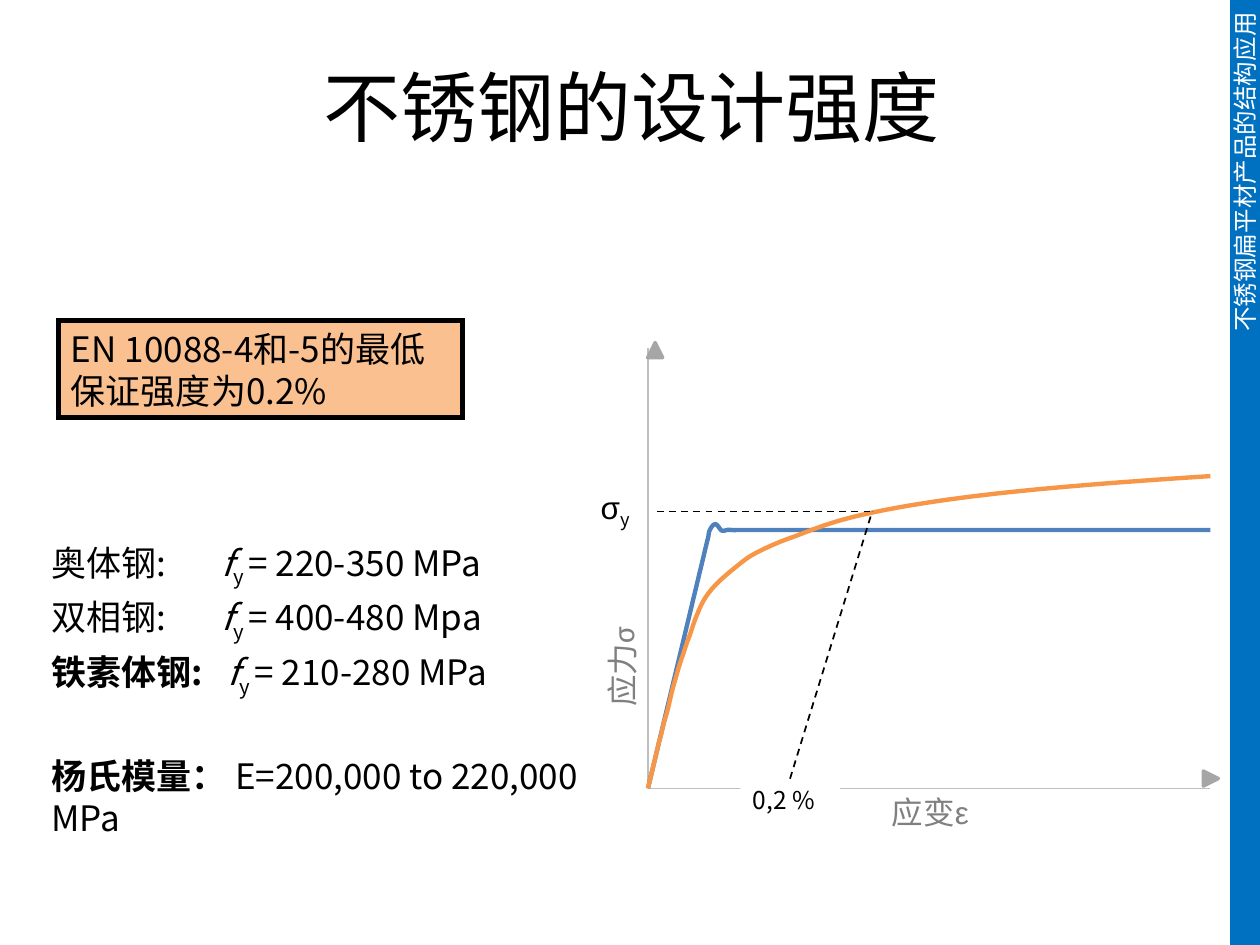
from lxml.etree import SubElement
from pptx import Presentation
from pptx.chart.data import XyChartData
from pptx.dml.color import RGBColor
from pptx.enum.chart import XL_CHART_TYPE, XL_TICK_LABEL_POSITION, XL_TICK_MARK
from pptx.enum.dml import MSO_LINE
from pptx.enum.shapes import MSO_CONNECTOR, MSO_SHAPE
from pptx.enum.text import MSO_ANCHOR, PP_ALIGN
from pptx.oxml import parse_xml
from pptx.oxml.ns import nsdecls, qn
from pptx.util import Pt

CJK = "Noto Sans CJK SC"
YIELD = [("f", {"italic": True}), ("y ", {"sub": True})]
STEEL_STRESS = [0, 2, 4, 6, 8, 9, 11, 13, 15, 17, 19, 21, 23, 25, 26, 28, 30, 32, 34, 36,
                38, 40, 42, 43]
STAINLESS_STRESS = STEEL_STRESS + [45, 47, 49, 51, 53, 55, 57, 58, 60, 62, 64, 66, 68, 70,
                                   72, 74, 75, 77, 79, 81, 83, 85, 87, 89, 91, 92, 94, 96,
                                   98, 100]
STAINLESS_STRAIN = [0, 0.00005, 0.0001, 0.00015, 0.0002, 0.00023, 0.00028, 0.00034, 0.00039,
                    0.00044, 0.0005, 0.00056, 0.00063, 0.0007, 0.00074, 0.00081, 0.00089,
                    0.00099, 0.00114, 0.00135, 0.0016, 0.0019, 0.00235, 0.00263, 0.0032,
                    0.004, 0.0052, 0.007, 0.0097, 0.013, 0.016, 0.02, 0.03, 0.04, 0.042,
                    0.05, 0.07, 0.08, 0.1, 0.11, 0.13, 0.15, 0.17, 0.2, 0.23, 0.25, 0.29,
                    0.32, 0.35, 0.39, 0.43, 0.48, 0.52, 0.57]
STEEL_PLATEAU = [(0.0011, 44), (0.0012, 45), (0.0013, 44), (0.0014, 44), (0.0015, 44),
                 (0.0016, 44), (0.0017, 44), (0.0018, 44), (0.003, 44), (0.005, 44),
                 (0.01, 44), (0.015, 44)]


def color(value):
    """Turn a hex string into a colour."""
    return RGBColor.from_string(value)


def points(box):
    """Convert a box of numbers to lengths."""
    return [Pt(value) for value in box]


def inside(box, left, top, width, height):
    """Place a part relative to the corner of its region."""
    return box[0] + left, box[1] + top, width, height


def add_span(para, text, size, ink="000000", font=CJK, bold=False, italic=False, sub=False):
    """Add one formatted run to a paragraph."""
    span = para.add_run()
    span.text = text
    span.font.size = Pt(size)
    span.font.name = font
    span.font.bold = bold
    span.font.italic = italic
    span.font.color.rgb = color(ink)
    properties = span.font._element
    SubElement(properties, qn("a:ea")).set("typeface", font)
    if sub:
        properties.set("baseline", "-25000")


def add_text(page, box, spans, size, ink="000000", align=PP_ALIGN.LEFT):
    """Add a text box with one vertically centred paragraph."""
    shape = page.shapes.add_textbox(*points(box))
    fill_text(shape, spans, size, ink, align)
    return shape


def fill_text(shape, spans, size, ink="000000", align=PP_ALIGN.LEFT):
    """Write one paragraph into a shape."""
    frame = shape.text_frame
    frame.word_wrap = True
    frame.vertical_anchor = MSO_ANCHOR.MIDDLE
    para = frame.paragraphs[0]
    para.alignment = align
    for text, style in spans:
        add_span(para, text, size, ink, **style)
    return para


def add_block(page, box, fill, kind=MSO_SHAPE.RECTANGLE, line=None, width=0):
    """Add a filled preset shape."""
    shape = page.shapes.add_shape(kind, *points(box))
    shape.shadow.inherit = False
    shape.fill.solid()
    shape.fill.fore_color.rgb = color(fill)
    if line:
        shape.line.color.rgb = color(line)
        shape.line.width = Pt(width)
    else:
        shape.line.fill.background()
    return shape


def add_dash(page, box, start, end):
    """Add a dashed guide line inside a region."""
    ends = [box[0] + start[0], box[1] + start[1], box[0] + end[0], box[1] + end[1]]
    guide = page.shapes.add_connector(MSO_CONNECTOR.STRAIGHT, *points(ends))
    guide.line.color.rgb = color("000000")
    guide.line.width = Pt(1)
    guide.line.dash_style = MSO_LINE.DASH
    SubElement(guide._element.spPr, qn("a:effectLst"))
    return guide


def add_sidebar(page, box):
    """Draw the blue strip with its vertical course title."""
    strip = add_block(page, box, "0070C0")
    fill_text(strip, [("不锈钢扁平材产品的结构应用", {})], 14, "FFFFFF", PP_ALIGN.RIGHT)
    strip.text_frame._txBody.bodyPr.set("vert", "vert270")


def add_note(page, box):
    """Draw the framed note on minimum strength."""
    note = add_block(page, box, "FAC090", line="000000", width=3)
    SubElement(note.line._get_or_add_ln(), qn("a:miter")).set("lim", "800000")
    para = fill_text(note, [("EN 10088-4和-5的最低保证强度为0.2%", {})], 20)
    note.text_frame.margin_right = Pt(3)
    para.line_spacing = Pt(24)


def add_strengths(page, box):
    """List the design strength of each steel family."""
    rows = [("奥体钢:", False, YIELD, "= 220-350 MPa", 97.3, 0),
            ("双相钢:", False, YIELD, "= 400-480 Mpa", 97.3, 7),
            ("铁素体钢:", True, YIELD, "= 210-280 MPa", 100.8, 7),
            ("杨氏模量：", True, [], "E=200,000 to 220,000 MPa", 105, 31.6)]
    frame = page.shapes.add_textbox(*points(box)).text_frame
    frame.word_wrap = True
    frame.margin_top = Pt(44.4)
    for index, (name, bold, symbol, value, stop, gap) in enumerate(rows):
        para = frame.add_paragraph() if index else frame.paragraphs[0]
        para.space_before = Pt(gap)
        para.line_spacing = Pt(24.3)
        tabs = SubElement(para._p.get_or_add_pPr(), qn("a:tabLst"))
        SubElement(tabs, qn("a:tab"), pos=str(Pt(stop)), algn="l")
        add_span(para, name + "\t", 20, bold=bold)
        for text, style in symbol + [(value, {})]:
            add_span(para, text, 20, **style)


def add_curves(page, box):
    """Chart the stress-strain curves of stainless and carbon steel."""
    data = XyChartData()
    steel = [(stress / 40000, stress) for stress in STEEL_STRESS] + STEEL_PLATEAU
    curves = [("Series 1", zip(STAINLESS_STRAIN, STAINLESS_STRESS)), ("Series 2", steel)]
    for name, pairs in curves:
        series = data.add_series(name)
        for strain, stress in pairs:
            series.add_data_point(strain, stress)
    kind = XL_CHART_TYPE.XY_SCATTER_SMOOTH_NO_MARKERS
    chart = page.shapes.add_chart(kind, *points(box), data).chart
    chart.has_legend = False
    chart.has_title = False
    chart.font.name = "Calibri"
    chart.font.size = Pt(10)
    chart.font.color.rgb = color("000000")
    plot = chart.plots[0]
    plot.vary_by_categories = False
    for series, ink in zip(plot.series, ("F79646", "4F81BD")):
        series._element.get_or_add_smooth().val = True
        series.format.line.color.rgb = color(ink)
        series.format.line.width = Pt(2.5)
    for axis, limit in ((chart.category_axis, 0.01), (chart.value_axis, 75)):
        axis.minimum_scale = 0
        axis.maximum_scale = limit
        axis.has_major_gridlines = False
        axis.major_tick_mark = axis.minor_tick_mark = XL_TICK_MARK.NONE
        axis.tick_label_position = XL_TICK_LABEL_POSITION.NONE
        axis.format.line.color.rgb = color("BFBFBF")
        axis.format.line.width = Pt(0.75)
    area = chart._chartSpace.chart.plotArea
    for old in area.findall(qn("c:layout")):
        area.remove(old)
    area.insert(0, parse_xml(
        f'<c:layout {nsdecls("c")}><c:manualLayout><c:layoutTarget val="inner"/>'
        '<c:xMode val="edge"/><c:yMode val="edge"/><c:x val="0.02"/><c:y val="0.02"/>'
        '<c:w val="0.96"/><c:h val="0.96"/></c:manualLayout></c:layout>'))


def add_diagram(page, box):
    """Draw the curves with axis names, arrow tips and proof-stress guides."""
    add_curves(page, box)
    add_text(page, inside(box, 139, 255.6, 74.2, 28.8),
             [("应变", {}), ("ε", {"font": "Arial"})], 18, "808080")
    stress = add_text(page, inside(box, -45.4, 164.9, 74.2, 30.2),
                      [("应力", {}), ("σ", {"font": "Calibri"})], 18, "808080")
    stress.rotation = 270
    for left, top, turn in ((324, 246.9, 90), (6.5, 2.1, 0)):
        tip = add_block(page, inside(box, left, top, 8.6, 8.6), "A6A6A6",
                        MSO_SHAPE.ISOSCELES_TRIANGLE, "A6A6A6", 2)
        tip.rotation = turn
    add_text(page, inside(box, -27.4, 82.8, 44.6, 28.8),
             [("σ", {"font": "Arial"}), ("y", {"sub": True})], 18)
    offset = add_block(page, inside(box, 59.4, 251.3, 56.9, 24.5), "FFFFFF")
    fill_text(offset, [("0,2 %", {})], 14)
    add_dash(page, box, (11.8, 98.6), (133.5, 98.6))
    slope = add_dash(page, box, (87.85, 251.3), (134.8, 98.6))
    slope.begin_connect(offset, 0)


def main():
    """Build the slide and save the deck."""
    deck = Presentation()
    deck.slide_width, deck.slide_height = Pt(720), Pt(540)
    page = deck.slides.add_slide(deck.slide_layouts[6])
    add_sidebar(page, (702.9, 0, 17.1, 540))
    add_text(page, (37.2, 14.4, 648, 92.2), [("不锈钢的设计强度", {})], 44,
             align=PP_ALIGN.CENTER)
    add_strengths(page, (22.3, 267.8, 318.2, 192.2))
    add_note(page, (33.4, 183.3, 231.1, 55.4))
    add_diagram(page, (363.6, 193.7, 334.8, 262.1))
    deck.save("out.pptx")


if __name__ == "__main__":
    main()
